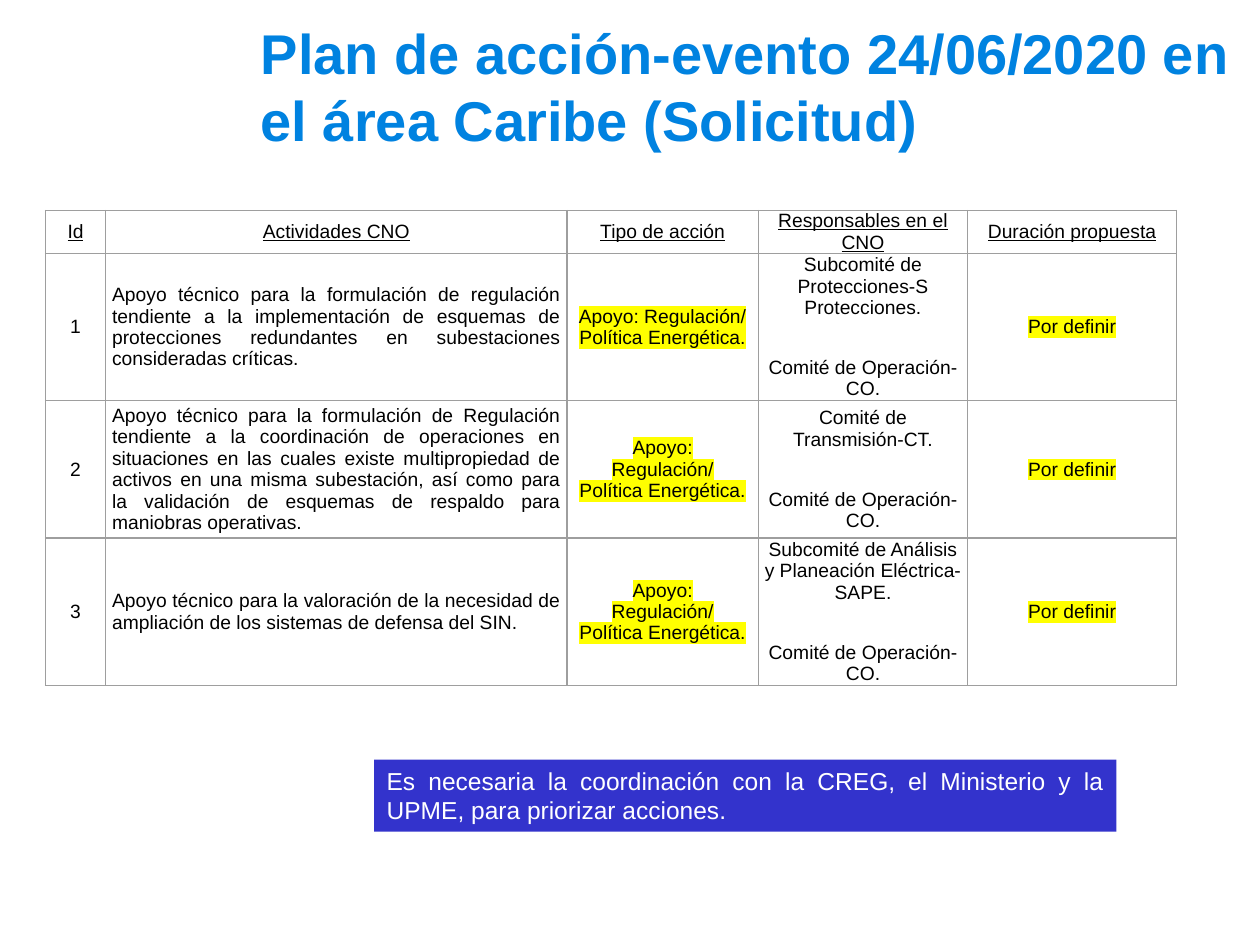
import pptx
import pptx.util
import pptx.dml.color
import pptx.enum.shapes
import pptx.enum.text
import pptx.oxml
import pptx.oxml.ns
from lxml import etree

Inches = pptx.util.Inches
Pt = pptx.util.Pt
RGBColor = pptx.dml.color.RGBColor
ALIGN = pptx.enum.text.PP_ALIGN
MIDDLE = pptx.enum.text.MSO_ANCHOR.MIDDLE
qn = pptx.oxml.ns.qn

TITLE_BLUE = RGBColor(0x00, 0x82, 0xE0)
NOTE_BLUE = RGBColor(0x33, 0x33, 0xCC)
BORDER_GREY = RGBColor(0x9E, 0x9E, 0x9E)
YELLOW = RGBColor(0xFF, 0xFF, 0x00)
BLACK = RGBColor(0x00, 0x00, 0x00)
WHITE = RGBColor(0xFF, 0xFF, 0xFF)

COLUMN_WIDTHS = [0.48, 3.66, 1.52, 1.66, 1.66]
ROW_HEIGHTS = [0.34, 1.17, 1.09, 1.17]
ACTIVITY, ACTION, OWNERS, DURATION = 1, 2, 3, 4

HEADERS = ["Id", "Actividades CNO", "Tipo de acción", "Responsables en el CNO",
           "Duración propuesta"]
OPERATION = "Comité de Operación-CO."
UNDEFINED = "Por definir"
POLICY = "Política Energética."
PLAN = [
    ["Apoyo técnico para la formulación de regulación tendiente a la "
     "implementación de esquemas de protecciones redundantes en subestaciones "
     "consideradas críticas.",
     ["Apoyo: Regulación/", POLICY],
     ["Subcomité de Protecciones-S Protecciones.", OPERATION]],
    ["Apoyo técnico para la formulación de Regulación tendiente a la "
     "coordinación de operaciones en situaciones en las cuales existe "
     "multipropiedad de activos en una misma subestación, así como para la "
     "validación de esquemas de respaldo para maniobras operativas.",
     ["Apoyo:", "Regulación/", POLICY],
     ["Comité de Transmisión-CT.", OPERATION]],
    ["Apoyo técnico para la valoración de la necesidad de ampliación de los "
     "sistemas de defensa del SIN.",
     ["Apoyo:", "Regulación/", POLICY],
     ["Subcomité de Análisis y Planeación Eléctrica-SAPE.", OPERATION]],
]


def style(paragraph, size, color, align, bold=False, underline=False):
    paragraph.alignment = align
    font = paragraph.font
    font.name, font.size = "Arial", Pt(size)
    font.bold, font.underline = bold, underline
    font.color.rgb = color


def highlight(run):
    marker = etree.SubElement(run._r.get_or_add_rPr(), qn("a:highlight"))
    etree.SubElement(marker, qn("a:srgbClr"), val=str(YELLOW))


def add_borders(cell):
    properties = cell._tc.get_or_add_tcPr()
    for position, side in enumerate(("lnL", "lnR", "lnT", "lnB")):
        line = etree.Element(qn(f"a:{side}"), w=str(Pt(0.75)))
        fill = etree.SubElement(line, qn("a:solidFill"))
        etree.SubElement(fill, qn("a:srgbClr"), val=str(BORDER_GREY))
        properties.insert(position, line)


def fill_cell(cell, lines, align=ALIGN.CENTER, underline=False, marked=False, gap=0):
    cell.margin_left = cell.margin_right = Inches(0.05)
    cell.margin_top = cell.margin_bottom = 0
    cell.vertical_anchor = MIDDLE
    cell.fill.background()
    add_borders(cell)
    frame = cell.text_frame
    for index, line in enumerate(lines):
        paragraph = frame.add_paragraph() if index else frame.paragraphs[0]
        run = paragraph.add_run()
        run.text = line
        if index and gap:
            paragraph.space_before = Pt(gap)
        style(paragraph, 11, BLACK, align, underline=underline)
        if marked:
            highlight(run)


def add_title(slide, text):
    title = slide.shapes.title
    title.left, title.top = Inches(1.97), Inches(0.21)
    title.width, title.height = Inches(8.03), Inches(0.94)
    frame = title.text_frame
    frame.text = text
    frame.auto_size = pptx.enum.text.MSO_AUTO_SIZE.NONE
    frame.vertical_anchor = MIDDLE
    style(frame.paragraphs[0], 32, TITLE_BLUE, ALIGN.LEFT, bold=True)


def add_plan_table(slide):
    table = slide.shapes.add_table(
        len(ROW_HEIGHTS), len(COLUMN_WIDTHS), Inches(0.36), Inches(1.67),
        Inches(sum(COLUMN_WIDTHS)), Inches(sum(ROW_HEIGHTS))).table
    table.first_row = table.horz_banding = False
    for column, width in zip(table.columns, COLUMN_WIDTHS):
        column.width = Inches(width)
    for row, height in zip(table.rows, ROW_HEIGHTS):
        row.height = Inches(height)

    for column, header in enumerate(HEADERS):
        fill_cell(table.cell(0, column), [header], underline=True)
    for number, (activity, action, owners) in enumerate(PLAN, start=1):
        fill_cell(table.cell(number, 0), [str(number)])
        fill_cell(table.cell(number, ACTIVITY), [activity], align=ALIGN.JUSTIFY)
        fill_cell(table.cell(number, ACTION), action, marked=True)
        fill_cell(table.cell(number, OWNERS), owners, gap=22)
        fill_cell(table.cell(number, DURATION), [UNDEFINED], marked=True)


def add_note(slide, text):
    note = slide.shapes.add_shape(
        pptx.enum.shapes.MSO_SHAPE.RECTANGLE,
        Inches(2.97), Inches(6.03), Inches(5.89), Inches(0.57))
    note.shadow.inherit = False
    note.fill.solid()
    note.fill.fore_color.rgb = NOTE_BLUE
    note.line.fill.background()
    frame = note.text_frame
    frame.word_wrap = True
    frame.vertical_anchor = pptx.enum.text.MSO_ANCHOR.TOP
    frame.text = text
    style(frame.paragraphs[0], 14, WHITE, ALIGN.JUSTIFY)


def main():
    presentation = pptx.Presentation()
    presentation.slide_width, presentation.slide_height = Inches(10), Inches(7.5)
    title_only = presentation.slide_layouts[5]
    slide = presentation.slides.add_slide(title_only)
    add_title(slide, "Plan de acción-evento 24/06/2020 en el área Caribe (Solicitud)")
    add_plan_table(slide)
    add_note(slide, "Es necesaria la coordinación con la CREG, el Ministerio y la "
                    "UPME, para priorizar acciones.")
    presentation.save("out.pptx")


if __name__ == "__main__":
    main()
